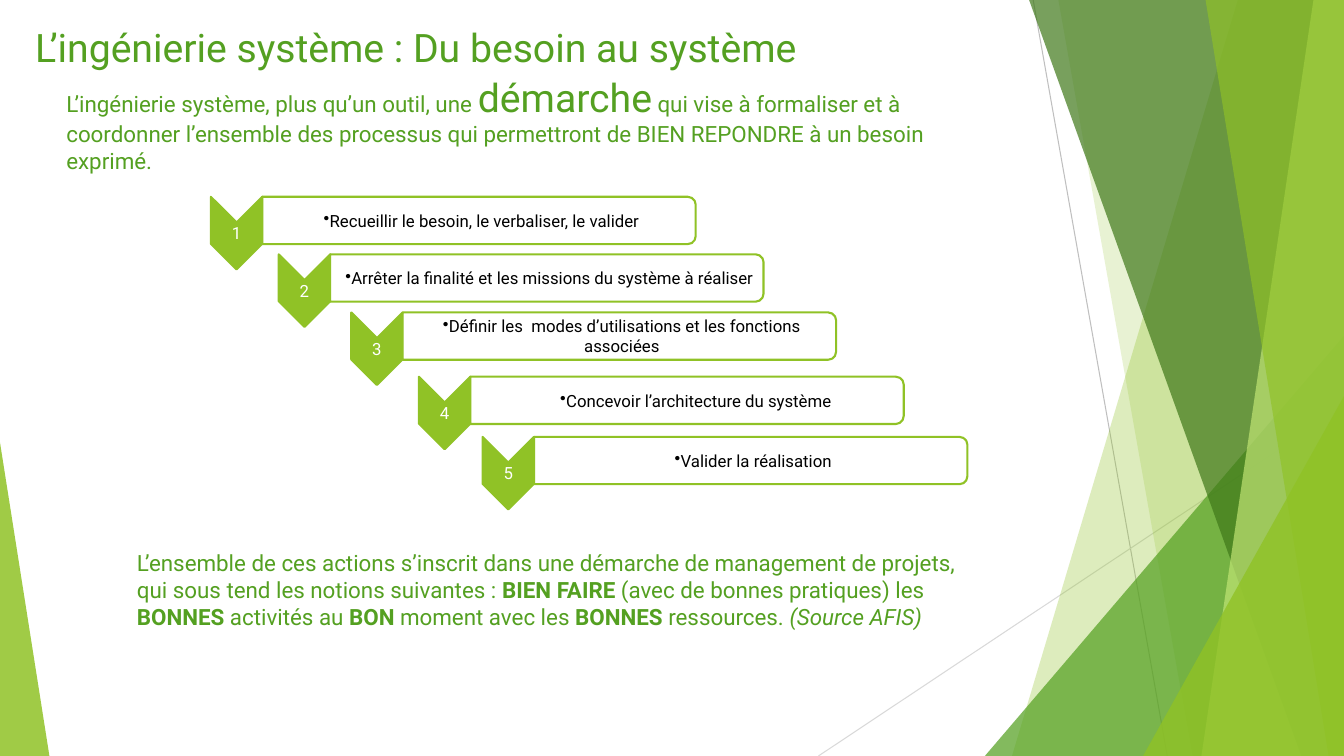
from lxml import etree
from pptx import Presentation
from pptx.dml.color import RGBColor
from pptx.enum.shapes import MSO_CONNECTOR, MSO_SHAPE
from pptx.enum.text import MSO_ANCHOR, PP_ALIGN
from pptx.oxml.ns import qn
from pptx.util import Pt

STRAIGHT = MSO_CONNECTOR.STRAIGHT
TRIANGLE = MSO_SHAPE.ISOSCELES_TRIANGLE
CHEVRON = MSO_SHAPE.CHEVRON
ROUNDED_BAR = MSO_SHAPE.ROUND_2_SAME_RECTANGLE
TOP, MIDDLE = MSO_ANCHOR.TOP, MSO_ANCHOR.MIDDLE
LEFT, CENTER = PP_ALIGN.LEFT, PP_ALIGN.CENTER

FONT = "Roboto"
LIME, GREEN, DARK_GREEN, PALE_LIME = "90C226", "54A021", "3F7819", "C0E474"
WHITE, BLACK = "FFFFFF", "000000"
WIDTH, HEIGHT = 960, 540
CHEVRON_WIDTH, CHEVRON_HEIGHT = 36.7, 51.8
BAR_WIDTH, BAR_HEIGHT = 309.6, 33.8

STEPS = [
    (150.6, 140.6, "Recueillir le besoin, le verbaliser, le valider"),
    (199.1, 181.7, "Arrêter la finalité et les missions du système à réaliser"),
    (250.9, 223.2, "Définir les  modes d’utilisations et les fonctions associées"),
    (299.2, 269.1, "Concevoir l’architecture du système"),
    (344.7, 312.1, "Valider la réalisation"),
]
INTRO = [
    ("L’ingénierie système, plus qu’un outil, une ", {}),
    ("démarche", {"size": Pt(28)}),
    (" qui vise à formaliser et à coordonner l’ensemble des processus qui "
     "permettront de BIEN REPONDRE à un besoin exprimé.", {}),
]
CONCLUSION = [
    ("L’ensemble de ces actions s’inscrit dans une démarche de management de "
     "projets, qui sous tend les notions suivantes : ", {}),
    ("BIEN FAIRE ", {"bold": True}),
    ("(avec de bonnes pratiques) les ", {}),
    ("BONNES", {"bold": True}),
    (" activités au ", {}),
    ("BON", {"bold": True}),
    (" moment avec les ", {}),
    ("BONNES", {"bold": True}),
    (" ressources. ", {}),
    ("(Source AFIS)", {"italic": True}),
]


def paint(color_format, color):
    color_format.rgb = RGBColor.from_string(color)


def fill_shape(shape, color, opacity=100, outline=None):
    shape.shadow.inherit = False
    shape.fill.solid()
    paint(shape.fill.fore_color, color)
    if opacity < 100:
        color_node = shape.fill._xPr.find(qn("a:solidFill"))[0]
        etree.SubElement(color_node, qn("a:alpha"), val=str(opacity * 1000))
    if outline:
        paint(shape.line.color, outline)
        shape.line.width = Pt(1.5)
    else:
        shape.line.fill.background()


def add_line(page, start, end, color):
    line = page.shapes.add_connector(STRAIGHT, *map(Pt, start + end))
    paint(line.line.color, color)
    line.line.width = Pt(0.75)
    etree.SubElement(line._element.spPr, qn("a:effectLst"))


def add_band(page, top_left, top_right, bottom_left, color, opacity):
    builder = page.shapes.build_freeform(Pt(top_left), 0)
    corners = [(top_right, 0), (WIDTH, HEIGHT), (bottom_left, HEIGHT)]
    if top_right < WIDTH:
        corners.insert(1, (WIDTH, 0))
    builder.add_line_segments([(Pt(x), Pt(y)) for x, y in corners])
    fill_shape(builder.convert_to_shape(), color, opacity)


def add_triangle(page, left, top, width, apex, color, opacity):
    shape = page.shapes.add_shape(
        TRIANGLE, Pt(left), Pt(top), Pt(width), Pt(HEIGHT - top))
    shape.adjustments[0] = apex
    fill_shape(shape, color, opacity)


def add_turned(page, kind, left, top, width, height, color, opacity=100):
    shape = page.shapes.add_shape(
        kind, Pt(left + (width - height) / 2), Pt(top + (height - width) / 2),
        Pt(height), Pt(width))
    shape.rotation = 90
    fill_shape(shape, color, opacity, LIME)


def add_text(page, left, top, width, height, spans, size, color,
             align=LEFT, anchor=TOP, insets=(7.2, 3.6, 7.2, 3.6), indent=0,
             bullet=False):
    box = page.shapes.add_textbox(Pt(left), Pt(top), Pt(width), Pt(height))
    frame = box.text_frame
    frame.word_wrap = True
    frame.vertical_anchor = anchor
    (frame.margin_left, frame.margin_top,
     frame.margin_right, frame.margin_bottom) = map(Pt, insets)
    para = frame.paragraphs[0]
    para.alignment = align
    para.font.name = FONT
    para.font.size = Pt(size)
    paint(para.font.color, color)
    properties = para._p.get_or_add_pPr()
    properties.set("marL", str(Pt(indent)))
    properties.set("indent", "0")
    if bullet:
        mark = etree.Element(qn("a:buChar"), char="•")
        properties.insert(0, mark)
    for text, style in spans:
        span = para.add_run()
        span.text = text
        span.font.name = FONT
        span.font.size = Pt(size)
        paint(span.font.color, color)
        for name, value in style.items():
            setattr(span.font, name, value)


def add_backdrop(page):
    add_line(page, (738, 0), (833.8, HEIGHT), "BFBFBF")
    add_line(page, (WIDTH, 290.2), (584.6, HEIGHT), "D9D9D9")
    add_band(page, 884.2, WIDTH, 722.9, LIME, 30)
    add_band(page, 756, WIDTH, 851.8, LIME, 20)
    add_triangle(page, 703.5, 239.8, 256.5, 1, GREEN, 72)
    add_band(page, 735.1, WIDTH, 929.5, DARK_GREEN, 70)
    add_band(page, 938.2, WIDTH, 858.2, PALE_LIME, 70)
    add_band(page, 861.1, WIDTH, 949, LIME, 65)
    add_triangle(page, 816.5, 283, 143.5, 1, LIME, 80)
    add_triangle(page, 0, 316.1, 35.3, 0, LIME, 85)


def add_step(page, number, left, top, text):
    add_turned(page, CHEVRON, left, top, CHEVRON_WIDTH, CHEVRON_HEIGHT, LIME)
    add_text(page, left, top + 18, CHEVRON_WIDTH, 15.8, [(str(number), {})],
             12, WHITE, CENTER, MIDDLE, (0.7,) * 4)
    bar_left = left + CHEVRON_WIDTH
    add_turned(page, ROUNDED_BAR, bar_left, top, BAR_WIDTH, BAR_HEIGHT, WHITE, 90)
    add_text(page, bar_left, top + 1.8, BAR_WIDTH - 2.2, 30.2, [(text, {})],
             12, BLACK, CENTER, MIDDLE, (6.7, 0.7, 0.7, 0.7),
             indent=9 if number == 4 else 0, bullet=True)


def main():
    deck = Presentation()
    deck.slide_width, deck.slide_height = Pt(WIDTH), Pt(HEIGHT)
    page = deck.slides.add_slide(deck.slide_layouts[6])
    add_backdrop(page)
    add_text(page, 18, 13, 578, 34.6,
             [("L’ingénierie système : Du besoin au système", {})], 28, GREEN)
    add_text(page, 54.7, 388.8, 653.8, 79.2, CONCLUSION, 16, GREEN, indent=36)
    add_text(page, 40.3, 49, 686, 80, INTRO, 16, GREEN)
    for number, (left, top, text) in enumerate(STEPS, 1):
        add_step(page, number, left, top, text)
    deck.save("out.pptx")


if __name__ == "__main__":
    main()
